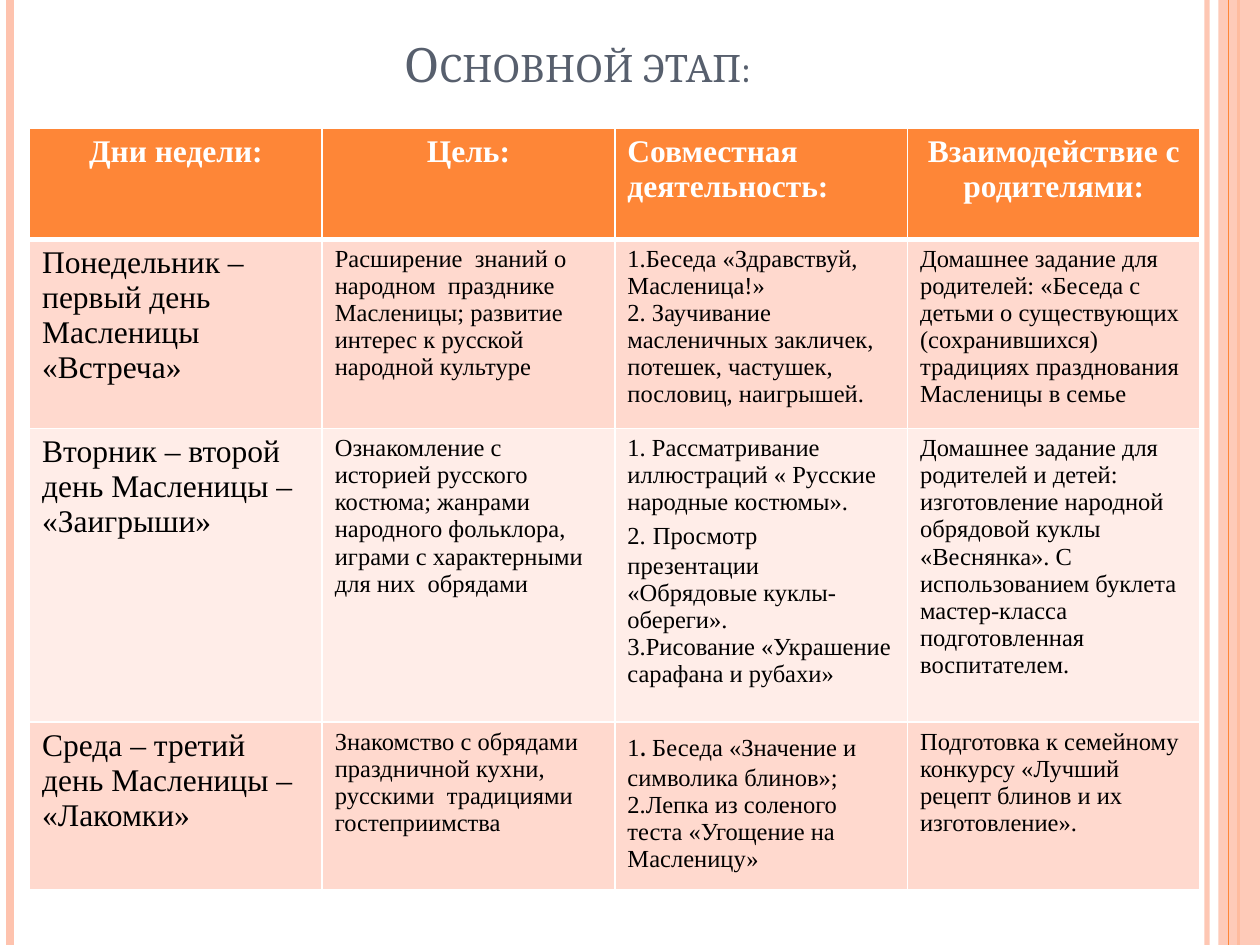
from lxml import etree
from pptx import Presentation
from pptx.dml.color import RGBColor
from pptx.enum.shapes import MSO_CONNECTOR, MSO_SHAPE
from pptx.enum.text import MSO_ANCHOR, PP_ALIGN
from pptx.oxml.ns import qn
from pptx.util import Inches, Pt

STRAIGHT = MSO_CONNECTOR.STRAIGHT
RECTANGLE = MSO_SHAPE.RECTANGLE
BOTTOM = MSO_ANCHOR.BOTTOM
LEFT, CENTER = PP_ALIGN.LEFT, PP_ALIGN.CENTER

WIDTH, HEIGHT = 10, 7.5
COLORS = {
    "orange": "FE8637", "peach": "FEC3AE", "title": "575F6D", "white": "FFFFFF",
    "black": "000000", "odd": "FFD9CE", "even": "FFEDE8",
}
TITLE_FONT, BODY_FONT = "Cambria", "Times New Roman"
BIG, SMALL = 18, 14

HEADERS = [
    ("Дни недели:", CENTER), ("Цель:", CENTER),
    ("Совместная деятельность:", LEFT), ("Взаимодействие с родителями:", CENTER),
]
# Each cell is a list of paragraphs; a tuple holds number, larger gap, text
DAYS = [
    [
        ["Понедельник – первый день Масленицы «Встреча»"],
        ["Расширение  знаний о народном  празднике Масленицы; развитие интерес "
         "к русской народной культуре"],
        ["1.Беседа «Здравствуй, Масленица!»",
         "2. Заучивание масленичных закличек, потешек, частушек, пословиц, наигрышей."],
        ["Домашнее задание для родителей: «Беседа с детьми о существующих "
         "(сохранившихся) традициях празднования Масленицы в семье"],
    ],
    [
        ["Вторник – второй день Масленицы – «Заигрыши»"],
        ["Ознакомление с  историей русского костюма; жанрами народного фольклора, "
         "играми с характерными для них  обрядами"],
        ["1. Рассматривание иллюстраций « Русские народные костюмы».",
         ("2.", " ", "Просмотр презентации «Обрядовые куклы-обереги»."),
         "3.Рисование «Украшение сарафана и рубахи»"],
        ["Домашнее задание для родителей и детей: изготовление народной обрядовой "
         "куклы «Веснянка». С использованием буклета мастер-класса подготовленная "
         "воспитателем."],
    ],
    [
        ["Среда – третий день Масленицы – «Лакомки»"],
        ["Знакомство с обрядами праздничной кухни, русскими  традициями "
         "гостеприимства"],
        [("1", ". ", "Беседа «Значение и символика блинов»;"),
         "2.Лепка из соленого теста «Угощение на Масленицу»"],
        ["Подготовка к семейному конкурсу «Лучший рецепт блинов и их изготовление»."],
    ],
]


class SlideBuilder:
    """Holds the style and the slide; places are shares of the slide's size."""

    def __init__(self, deck):
        self.deck = deck
        self.page = deck.slides.add_slide(deck.slide_layouts[6])

    def x(self, share):
        return round(self.deck.slide_width * share)

    def y(self, share):
        return round(self.deck.slide_height * share)

    def color(self, name):
        return RGBColor.from_string(COLORS[name])

    def fade(self, element, percent):
        tint = next(element.iter(qn("a:srgbClr")))
        etree.SubElement(tint, qn("a:alpha"), val=str(percent * 1000))

    def style(self, font, name, size, color, bold=False):
        font.name, font.size, font.bold = name, Pt(size), bold
        font.color.rgb = self.color(color)

    def stripe(self, left, color, weight, opacity=100):
        line = self.page.shapes.add_connector(
            STRAIGHT, self.x(left), 0, self.x(left), self.y(1))
        line.line.color.rgb = self.color(color)
        line.line.width = Pt(weight)
        properties = line._element.spPr
        etree.SubElement(properties, qn("a:effectLst"))
        if opacity < 100:
            self.fade(properties, opacity)

    def band(self, left, width, color, opacity):
        shape = self.page.shapes.add_shape(
            RECTANGLE, self.x(left), 0, self.x(width), self.y(1))
        shape.shadow.inherit = False
        shape.fill.solid()
        shape.fill.fore_color.rgb = self.color(color)
        shape.line.fill.background()
        self.fade(shape._element.spPr, opacity)

    def title(self, text, left, top, width, height):
        box = self.page.shapes.add_textbox(
            self.x(left), self.y(top), self.x(width), self.y(height))
        frame = box.text_frame
        frame.word_wrap = True
        frame.vertical_anchor = BOTTOM
        paragraph = frame.paragraphs[0]
        paragraph.alignment = CENTER
        self.style(paragraph.font, TITLE_FONT, 27, "title")
        span = paragraph.add_run()
        span.text = text
        span._r.get_or_add_rPr().set("cap", "small")

    def border(self, cell, sides):
        properties = cell._tc.get_or_add_tcPr()
        for side, weight in sides.items():
            line = etree.SubElement(properties, qn("a:ln" + side), w=str(Pt(weight)))
            fill = etree.SubElement(line, qn("a:solidFill"))
            etree.SubElement(fill, qn("a:srgbClr"), val=COLORS["white"])

    def cell(self, cell, paragraphs, size, fill, color="black", bold=False,
             align=LEFT, top=1, bottom=1):
        self.border(cell, {"L": 1, "R": 1, "T": top, "B": bottom})
        cell.fill.solid()
        cell.fill.fore_color.rgb = self.color(fill)
        for index, content in enumerate(paragraphs):
            frame = cell.text_frame
            paragraph = frame.add_paragraph() if index else frame.paragraphs[0]
            paragraph.alignment = align
            self.style(paragraph.font, BODY_FONT, size, color, bold)
            parts = content if isinstance(content, tuple) else (content,)
            for position, part in enumerate(parts):
                span = paragraph.add_run()
                span.text = part
                if position == 1:
                    span.font.name, span.font.size = TITLE_FONT, Pt(BIG)

    def table(self, headers, days, left, top, width, row_shares):
        table = self.page.shapes.add_table(
            len(row_shares), len(headers), self.x(left), self.y(top),
            self.x(width), self.y(sum(row_shares))).table
        for row, share in zip(table.rows, row_shares):
            row.height = self.y(share)
        for column, (text, align) in enumerate(headers):
            self.cell(table.cell(0, column), [text], BIG, "orange", "white",
                      bold=True, align=align, bottom=3)
        for row, day in enumerate(days, start=1):
            for column, paragraphs in enumerate(day):
                self.cell(table.cell(row, column), paragraphs,
                          SMALL if column else BIG, "odd" if row % 2 else "even",
                          top=3 if row == 1 else 1)


def main():
    deck = Presentation()
    deck.slide_width, deck.slide_height = Inches(WIDTH), Inches(HEIGHT)
    slide = SlideBuilder(deck)

    # Side stripes
    slide.stripe(0.958, "peach", 3, opacity=93)
    slide.stripe(0.008, "peach", 4.5)
    slide.stripe(0.983, "orange", 1.5)
    slide.band(0.967, 0.033, "peach", opacity=87)
    slide.stripe(0.975, "orange", 0.75)

    # Title and week plan
    slide.title("Основной этап:", 0.05, 0.04, 0.817, 0.064)
    slide.table(HEADERS, DAYS, 0.0235, 0.136, 0.929,
                [height / HEIGHT for height in (0.88, 1.45, 2.33, 1.25)])
    deck.save("out.pptx")


if __name__ == "__main__":
    main()
